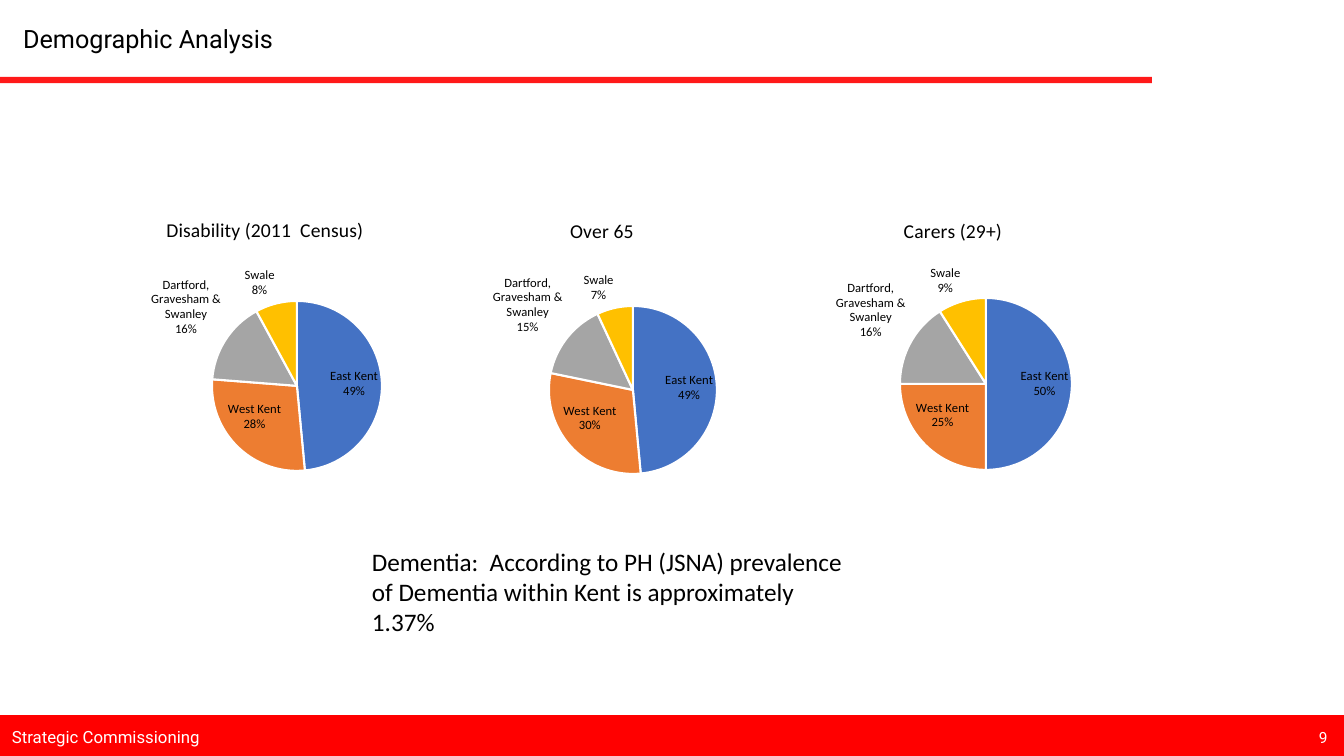
from dataclasses import dataclass

from lxml import etree
from pptx import Presentation
from pptx.chart.data import CategoryChartData
from pptx.dml.color import RGBColor
from pptx.enum.chart import XL_CHART_TYPE, XL_LABEL_POSITION
from pptx.enum.shapes import MSO_CONNECTOR, MSO_SHAPE
from pptx.enum.text import MSO_ANCHOR, PP_ALIGN
from pptx.oxml import parse_xml
from pptx.oxml.ns import nsdecls, qn
from pptx.util import Pt

PIE = XL_CHART_TYPE.PIE
BEST_FIT = XL_LABEL_POSITION.BEST_FIT
STRAIGHT = MSO_CONNECTOR.STRAIGHT
RECTANGLE = MSO_SHAPE.RECTANGLE
MIDDLE, TOP = MSO_ANCHOR.MIDDLE, MSO_ANCHOR.TOP
LEFT = PP_ALIGN.LEFT
TITLE_ONLY = 5

SLIDE_W, SLIDE_H = 1344, 756
EMU_PER_PX = 12192000 / SLIDE_W


@dataclass(frozen=True)
class Theme:
    red: RGBColor = RGBColor(0xFF, 0x00, 0x00)
    white: RGBColor = RGBColor(0xFF, 0xFF, 0xFF)
    black: RGBColor = RGBColor(0x00, 0x00, 0x00)
    areas: tuple = ("4472C4", "ED7D31", "A5A5A5", "FFC000")
    brand_font: str = "Roboto"
    body_font: str = "Calibri"
    heading: int = 18
    chart_title: int = 14
    footer: int = 12
    page: int = 11
    label: int = 9


THEME = Theme()
AREAS = ("East Kent", "West Kent", "Dartford, Gravesham & Swanley", "Swale")
# Heading, shares, chart box, and the pie's centre and radius within that box
PIES = (
    ("Disability (2011  Census)", (49, 28, 16, 8), (13, 201, 504, 302), (284, 185, 85)),
    ("Carers (29+)", (50, 25, 16, 9), (701, 202, 504, 302), (285, 182, 86)),
    ("Over 65", (49, 30, 15, 7), (350, 202, 504, 302), (283, 188, 84)),
)


def px(*lengths):
    return [round(length * EMU_PER_PX) for length in lengths]


def style_font(font, size, color, name):
    font.size, font.bold, font.name = Pt(size), False, name
    font.color.rgb = color


def write(frame, words, size, color, name, anchor=TOP):
    frame.word_wrap = True
    frame.vertical_anchor = anchor
    paragraph = frame.paragraphs[0]
    paragraph.alignment = LEFT
    run = paragraph.add_run()
    run.text = words
    style_font(run.font, size, color, name)
    return paragraph


def add_words(slide, box, *args):
    write(slide.shapes.add_textbox(*px(*box)).text_frame, *args)


def add_heading(slide, box):
    left, top, width, height = box
    title = slide.shapes.title
    title.left, title.top, title.width, title.height = px(left + 13, top + 21, 371, 39)
    paragraph = write(title.text_frame, "Demographic Analysis", THEME.heading,
                      THEME.black, THEME.brand_font, MIDDLE)
    paragraph.line_spacing = 0.9

    rule_y = top + height
    rule = slide.shapes.add_connector(
        STRAIGHT, *px(left, rule_y, left + width, rule_y))
    rule.line.color.rgb = THEME.red
    rule.line.width = Pt(4.5)
    properties = rule._element.spPr
    color = properties.find(".//" + qn("a:srgbClr"))
    etree.SubElement(color, qn("a:alpha")).set("val", "90000")
    etree.SubElement(properties, qn("a:effectLst"))


def add_footer(slide, box):
    left, top, width, height = box
    band = slide.shapes.add_shape(RECTANGLE, *px(*box))
    band.shadow.inherit = False
    band.fill.solid()
    band.fill.fore_color.rgb = THEME.red
    band.line.color.rgb = THEME.red
    band.line.width = Pt(1)
    add_words(slide, (left + 2, top + 1, 235, height), "Strategic Commissioning",
              THEME.footer, THEME.white, THEME.brand_font, MIDDLE)
    add_words(slide, (left + width - 35, top + 7, 34, 29), "9",
              THEME.page, THEME.white, THEME.brand_font)


def place_pie(chart, box, pie):
    _, _, width, height = box
    center_x, center_y, radius = pie
    bounds = {"x": (center_x - radius) / width, "y": (center_y - radius) / height,
              "w": 2 * radius / width, "h": 2 * radius / height}
    plot_area = chart._chartSpace.chart.plotArea
    for old in plot_area.findall(qn("c:layout")):
        plot_area.remove(old)
    values = "".join(f'<c:{key} val="{share:.4f}"/>' for key, share in bounds.items())
    plot_area.insert(0, parse_xml(
        f'<c:layout {nsdecls("c")}><c:manualLayout><c:layoutTarget val="inner"/>'
        f'<c:xMode val="edge"/><c:yMode val="edge"/>{values}'
        '</c:manualLayout></c:layout>'))


def clear_background(chart):
    chart._chartSpace.chart.addnext(parse_xml(
        f'<c:spPr {nsdecls("c", "a")}><a:noFill/><a:ln><a:noFill/></a:ln></c:spPr>'))


def add_pie(slide, heading, shares, box, pie):
    data = CategoryChartData(number_format="0")
    data.categories = AREAS
    data.add_series(heading, shares)
    chart = slide.shapes.add_chart(PIE, *px(*box), data).chart
    chart.has_legend = False
    style_font(chart.font, 10, THEME.black, THEME.body_font)
    clear_background(chart)

    chart.has_title = True
    run = chart.chart_title.text_frame.paragraphs[0].add_run()
    run.text = heading
    style_font(run.font, THEME.chart_title, THEME.black, THEME.body_font)
    chart.chart_title.include_in_layout = False
    place_pie(chart, box, pie)

    plot = chart.plots[0]
    plot.vary_by_categories = True
    for index, color in enumerate(THEME.areas):
        style = plot.series[0].points[index].format
        style.fill.solid()
        style.fill.fore_color.rgb = RGBColor.from_string(color)
        style.line.color.rgb = THEME.white
        style.line.width = Pt(1.5)

    labels = plot.series[0].data_labels
    labels.show_value = False
    labels.show_category_name = labels.show_percentage = True
    labels.number_format, labels.number_format_is_linked = "0%", False
    labels.position = BEST_FIT
    style_font(labels.font, THEME.label, THEME.black, THEME.body_font)
    separator = etree.Element(qn("c:separator"))
    separator.text = "\n"
    labels._element.find(qn("c:showBubbleSize")).addnext(separator)


def main():
    deck = Presentation()
    deck.slide_width, deck.slide_height = px(SLIDE_W, SLIDE_H)
    slide = deck.slides.add_slide(deck.slide_layouts[TITLE_ONLY])
    add_footer(slide, (0, 716, SLIDE_W, 40))
    add_heading(slide, (0, 0, 1152, 80))
    for heading, shares, box, pie in PIES:
        add_pie(slide, heading, shares, box, pie)
    add_words(slide, (362, 541, 504, 102),
              "Dementia:  According to PH (JSNA) prevalence of Dementia within Kent"
              " is approximately 1.37%",
              THEME.heading, THEME.black, THEME.body_font)
    deck.save("out.pptx")


if __name__ == "__main__":
    main()
